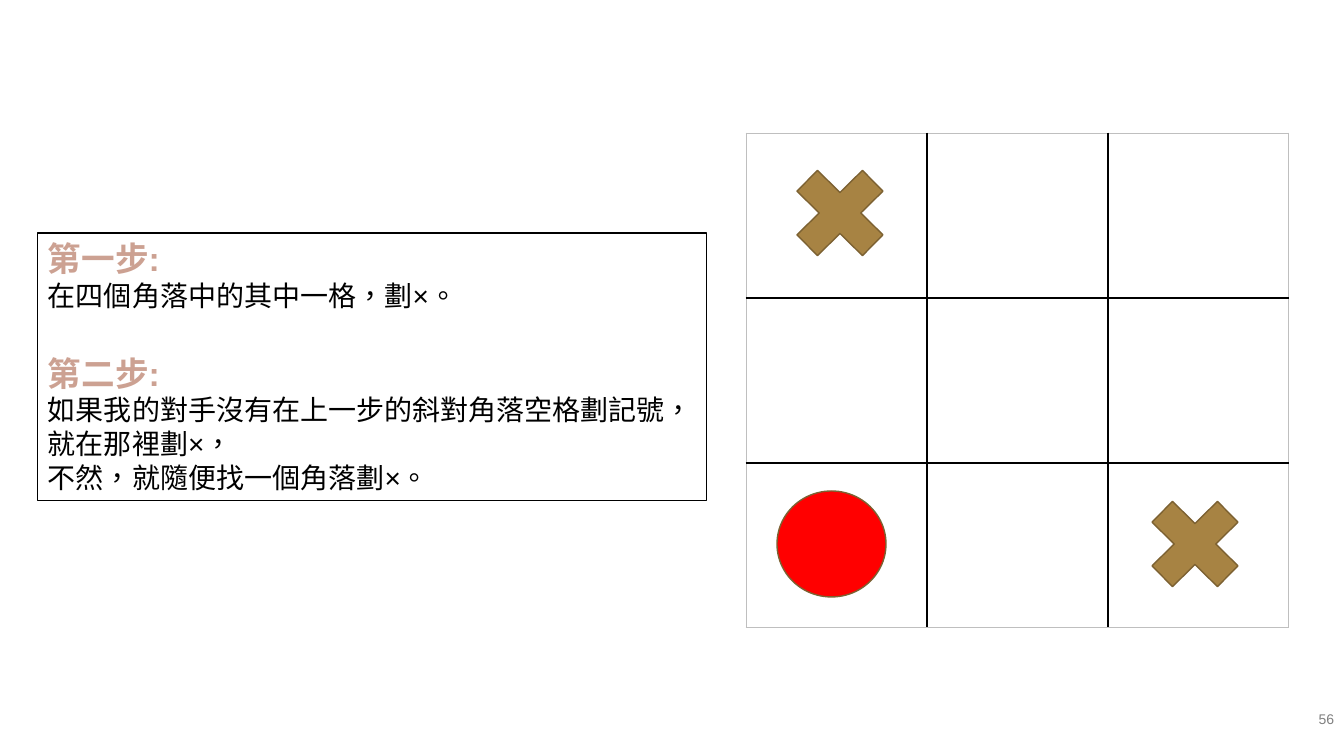
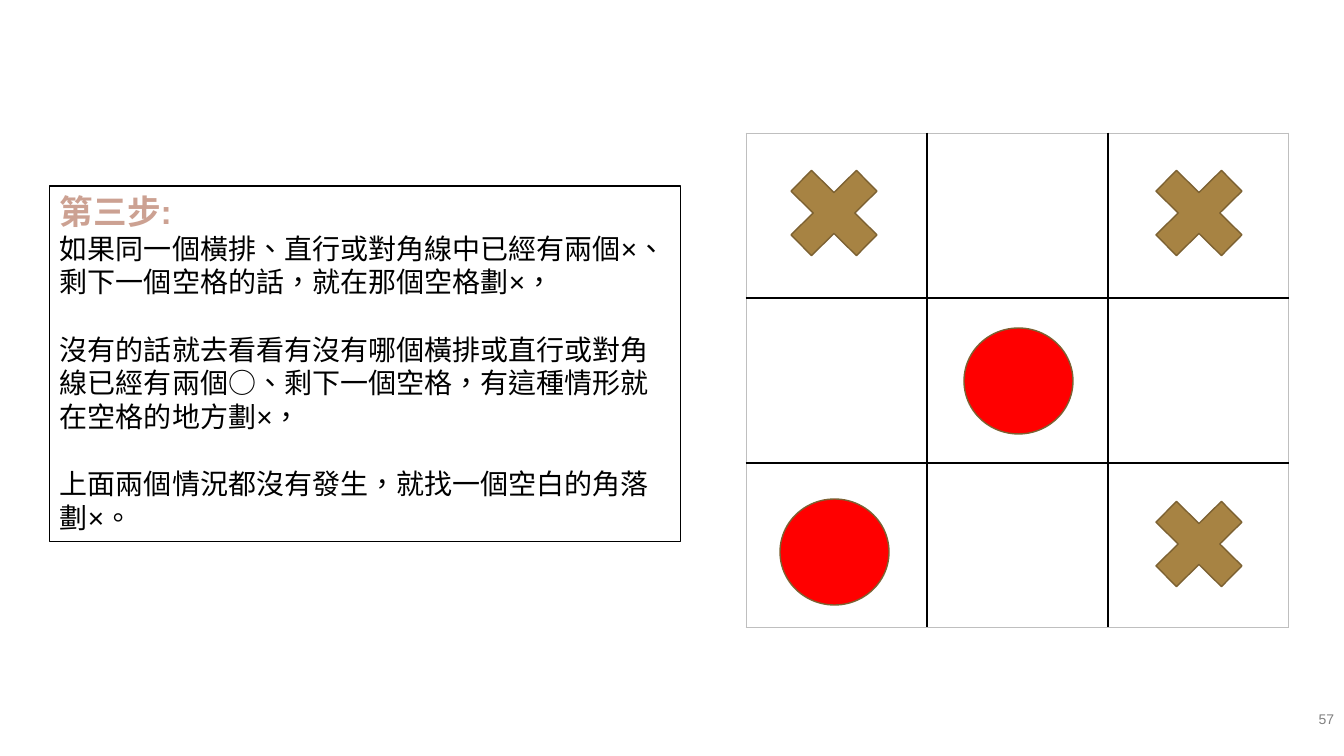
"""Build two slides on a noughts-and-crosses strategy."""
from lxml import etree
from pptx import Presentation
from pptx import util as u
from pptx.dml.color import RGBColor
from pptx.enum import lang, shapes, text
from pptx.oxml.ns import qn

SCALE = 12192000 / 1344
FONT = "Arial"
BLACK, WHITE, GREY, EDGE = "000000", "FFFFFF", "808080", "BFBFBF"
ROSE, GOLD, BROWN, RED = "CCA192", "A78343", "7C6132", "FF0000"

STYLES = {
    "heading": {"size": 24, "bold": True, "color": ROSE},
    "body": {"size": 20, "bold": False, "color": BLACK},
    "number": {"size": 10, "bold": False, "color": GREY},
}
MARKS = {
    "cross": (shapes.MSO_SHAPE.MATH_MULTIPLY, 126, 124, GOLD),
    "circle": (shapes.MSO_SHAPE.OVAL, 109, 106, RED),
}
GRID_SIZE = 3
GRID_LEFT, GRID_TOP, CELL_WIDTH, CELL_HEIGHT = 746, 133, 181, 165

SLIDES = [
    {
        "number": "56",
        "box": (38, 233, 669, 268),
        "steps": [
            ("heading", "第一步:", 0),
            ("body", "在四個角落中的其中一格，劃×。", 0),
            ("heading", "第二步:", 29),
            ("body", "如果我的對手沒有在上一步的斜對角落空格劃記號，", 0),
            ("body", "就在那裡劃×，", 0),
            ("body", "不然，就隨便找一個角落劃×。", 0),
        ],
        "marks": [("cross", 777, 151), ("circle", 777, 491), ("cross", 1132, 482)],
    },
    {
        "number": "57",
        "box": (50, 186, 631, 356),
        "steps": [
            ("heading", "第三步:", 0),
            ("body", "如果同一個橫排、直行或對角線中已經有兩個×、剩下一個空格的話，"
                     "就在那個空格劃×，", 0),
            ("body", "沒有的話就去看看有沒有哪個橫排或直行或對角線已經有兩個○、"
                     "剩下一個空格，有這種情形就在空格的地方劃×，", 24),
            ("body", "上面兩個情況都沒有發生，就找一個空白的角落劃×。", 24),
        ],
        "marks": [("cross", 771, 151), ("circle", 780, 499), ("cross", 1136, 482),
                  ("circle", 964, 328), ("cross", 1136, 151)],
    },
]


def px(*lengths):
    """Turn pixel lengths into EMU."""
    return [u.Emu(round(length * SCALE)) for length in lengths]


def color(value):
    """Turn a hex string into a colour."""
    return RGBColor.from_string(value)


def apply(target, values):
    """Set attributes from a dict."""
    for name, value in values.items():
        setattr(target, name, value)


def write(para, content, style):
    """Add one run of styled text to a paragraph."""
    span = para.add_run()
    span.text = content
    look = STYLES[style]
    apply(span.font, {"name": FONT, "size": u.Pt(look["size"]), "bold": look["bold"],
                      "language_id": lang.MSO_LANGUAGE_ID.TRADITIONAL_CHINESE})
    span.font.color.rgb = color(look["color"])


def add_figure(page, kind, frame, fill, line, weight):
    """Add a filled and outlined preset shape."""
    figure = page.shapes.add_shape(kind, *px(*frame))
    figure.shadow.inherit = False
    figure.fill.solid()
    figure.fill.fore_color.rgb = color(fill)
    figure.line.color.rgb = color(line)
    figure.line.width = u.Pt(weight)
    return figure


def add_number(page, number):
    """Add the slide number at the bottom right."""
    frame = page.shapes.add_textbox(*px(1023, 707, 321, 23)).text_frame
    apply(frame, {"word_wrap": True, "vertical_anchor": text.MSO_ANCHOR.MIDDLE,
                  "margin_top": 0, "margin_bottom": 0})
    para = frame.paragraphs[0]
    para.alignment = text.PP_ALIGN.RIGHT
    write(para, number, "number")


def add_steps(page, place, steps):
    """Add the outlined box that explains the steps."""
    box = add_figure(page, shapes.MSO_SHAPE.RECTANGLE, place, WHITE, BLACK, 0.75)
    frame = box.text_frame
    apply(frame, {"word_wrap": True, "vertical_anchor": text.MSO_ANCHOR.TOP,
                  "auto_size": text.MSO_AUTO_SIZE.SHAPE_TO_FIT_TEXT})
    for index, (style, content, gap) in enumerate(steps):
        para = frame.add_paragraph() if index else frame.paragraphs[0]
        para.alignment = text.PP_ALIGN.LEFT
        if gap:
            para.space_before = u.Pt(gap)
        write(para, content, style)


def set_border(cell, side, value, weight):
    """Draw one side of a table cell."""
    properties = cell._tc.get_or_add_tcPr()
    line = etree.SubElement(properties, qn(f"a:ln{side}"), w=str(u.Pt(weight)))
    fill = etree.SubElement(line, qn("a:solidFill"))
    etree.SubElement(fill, qn("a:srgbClr"), val=value)


def add_grid(page):
    """Add the playing grid with black inner lines and a pale edge."""
    frame = px(GRID_LEFT, GRID_TOP, GRID_SIZE * CELL_WIDTH, GRID_SIZE * CELL_HEIGHT)
    table = page.shapes.add_table(GRID_SIZE, GRID_SIZE, *frame).table
    apply(table, {"first_row": False, "horz_banding": False})
    last = GRID_SIZE - 1
    for row in range(GRID_SIZE):
        for column in range(GRID_SIZE):
            cell = table.cell(row, column)
            outer = {"L": column == 0, "R": column == last,
                     "T": row == 0, "B": row == last}
            for side, at_edge in outer.items():
                set_border(cell, side, *((EDGE, 0.75) if at_edge else (BLACK, 1)))
            cell.fill.background()


def add_mark(page, name, left, top):
    """Add a cross or a circle."""
    kind, width, height, fill = MARKS[name]
    add_figure(page, kind, (left, top, width, height), fill, BROWN, 1)


def main():
    """Build and save the deck."""
    deck = Presentation()
    deck.slide_width, deck.slide_height = px(1344, 756)
    for content in SLIDES:
        page = deck.slides.add_slide(deck.slide_layouts[6])
        add_number(page, content["number"])
        add_steps(page, content["box"], content["steps"])
        add_grid(page)
        for mark in content["marks"]:
            add_mark(page, *mark)
    deck.save("out.pptx")


if __name__ == "__main__":
    main()
